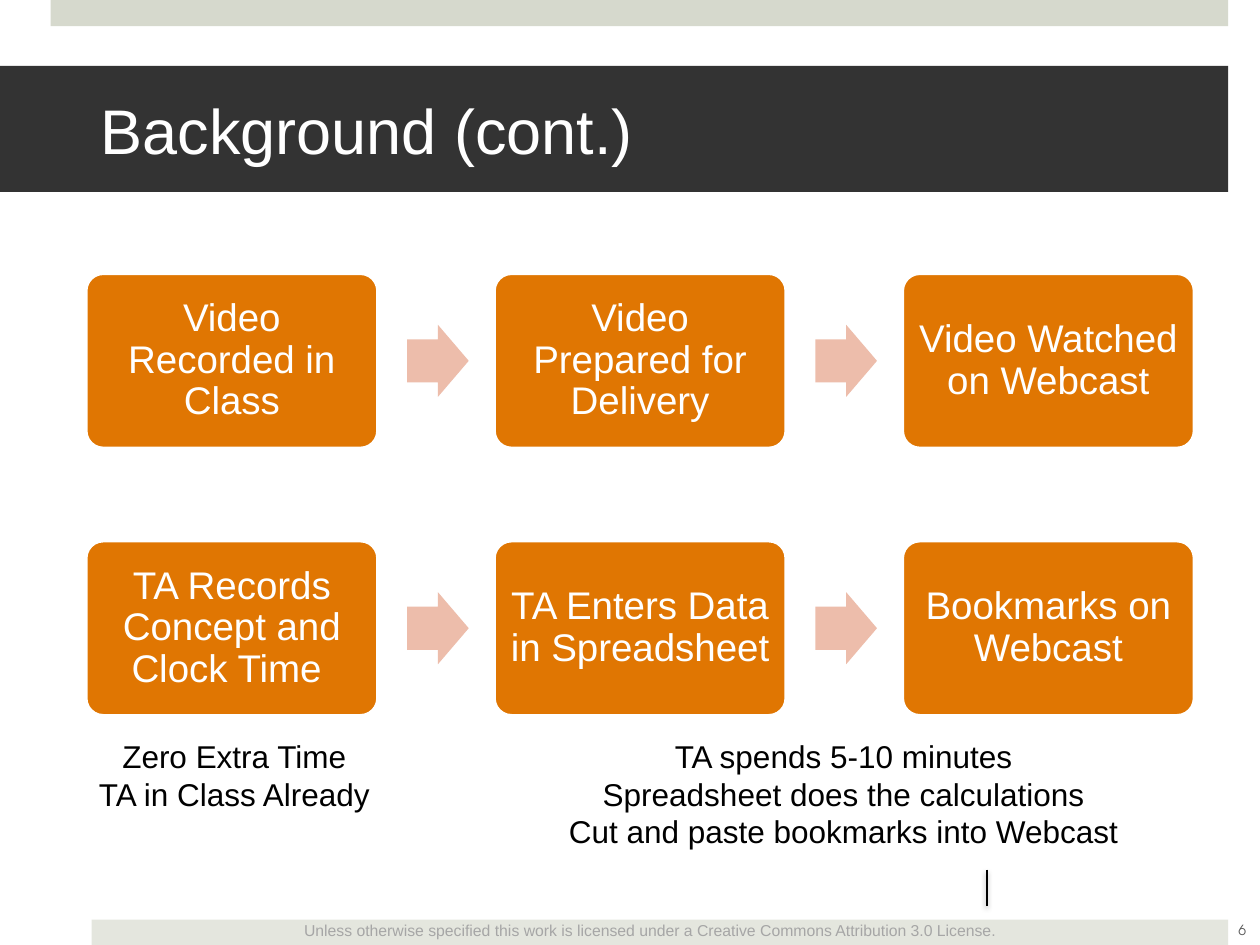
from dataclasses import dataclass

from pptx import Presentation
from pptx.dml.color import RGBColor
from pptx.enum import shapes, text
from pptx.oxml import parse_xml
from pptx.oxml.ns import nsdecls
from pptx.util import Cm, Pt

COLORS = {
    "sage": "D6D9CD", "pale_sage": "E4E6DE", "charcoal": "333333",
    "orange": "E07602", "peach": "EDBDAB", "white": "FFFFFF",
    "black": "000000", "license_gray": "A6A6A6", "number_gray": "595959",
}
STEP_LEFT, STEP_PITCH, STEP_WIDTH, STEP_HEIGHT = 1.73, 8.23, 5.89, 3.53
ARROW_OFFSET, ARROW_WIDTH, ARROW_HEIGHT = 6.48, 1.24, 1.45


@dataclass
class Flow:
    top: float
    steps: tuple[str, ...]


@dataclass
class Caption:
    """Centred text; position and size in centimetres."""
    left: float
    top: float
    width: float
    height: float
    lines: tuple[str, ...]
    size: int = 18
    color: str = "black"
    font: str = "Arial"
    wrap: bool = True
    anchor: text.MSO_ANCHOR = text.MSO_ANCHOR.TOP


FLOWS = (
    Flow(5.51, ("Video Recorded in Class", "Video Prepared for Delivery",
                "Video Watched on Webcast")),
    Flow(10.9, ("TA Records Concept and Clock Time ",
                "TA Enters Data in Spreadsheet ", "Bookmarks on Webcast")),
)
CAPTIONS = (
    Caption(1.9, 18.44, 22.4, 0.64,
            ("Unless otherwise specified this work is licensed under a "
             "Creative Commons Attribution 3.0 License.",), 9, "license_gray"),
    Caption(24.41, 18.24, 1.27, 1.02, ("6",), 8, "number_gray",
            "TeX Gyre Adventor", anchor=text.MSO_ANCHOR.MIDDLE),
    Caption(1.7, 14.73, 6.05, 1.8,
            ("Zero Extra Time", "TA in Class Already"), wrap=False),
    Caption(10.11, 14.73, 13.79, 2.57,
            ("TA spends 5-10 minutes", "Spreadsheet does the calculations",
             "Cut and paste bookmarks into Webcast")),
)


def color(name: str) -> RGBColor:
    return RGBColor.from_string(COLORS[name])


def style(para, size: int, tint: str, align, font: str = "Arial") -> None:
    para.alignment = align
    para.font.size = Pt(size)
    para.font.name = font
    para.font.color.rgb = color(tint)


def add_block(page, kind, left: float, top: float, width: float,
              height: float, fill: str):
    block = page.shapes.add_shape(kind, Cm(left), Cm(top), Cm(width), Cm(height))
    block.shadow.inherit = False
    block.fill.solid()
    block.fill.fore_color.rgb = color(fill)
    block.line.fill.background()
    return block


def add_step(page, left: float, top: float, label: str) -> None:
    box = add_block(page, shapes.MSO_SHAPE.ROUNDED_RECTANGLE, left, top,
                    STEP_WIDTH, STEP_HEIGHT, "orange")
    box.adjustments[0] = 0.1
    box.line.color.rgb = color("white")
    box.line.width = Pt(2)
    frame = box.text_frame
    frame.word_wrap = True
    frame.vertical_anchor = text.MSO_ANCHOR.MIDDLE
    frame.margin_left = frame.margin_right = Cm(0.22)
    frame.margin_top = frame.margin_bottom = Cm(0.22)
    para = frame.paragraphs[0]
    para.text = label
    para.line_spacing = 0.9
    style(para, 22, "white", text.PP_ALIGN.CENTER)


def add_flow(page, flow: Flow) -> None:
    for index, label in enumerate(flow.steps):
        left = STEP_LEFT + index * STEP_PITCH
        add_step(page, left, flow.top, label)
        if index < len(flow.steps) - 1:
            arrow = add_block(page, shapes.MSO_SHAPE.RIGHT_ARROW,
                              left + ARROW_OFFSET,
                              flow.top + (STEP_HEIGHT - ARROW_HEIGHT) / 2,
                              ARROW_WIDTH, ARROW_HEIGHT, "peach")
            arrow.adjustments[0] = 0.6
            arrow.adjustments[1] = 0.5


def add_caption(page, caption: Caption) -> None:
    box = page.shapes.add_textbox(Cm(caption.left), Cm(caption.top),
                                  Cm(caption.width), Cm(caption.height))
    frame = box.text_frame
    frame.word_wrap = caption.wrap
    frame.vertical_anchor = caption.anchor
    frame.text = "\n".join(caption.lines)
    for para in frame.paragraphs:
        style(para, caption.size, caption.color, text.PP_ALIGN.CENTER, caption.font)


def add_tick(page) -> None:
    """Short vertical line with a soft shadow above the footer."""
    tick = page.shapes.add_connector(shapes.MSO_CONNECTOR.STRAIGHT,
                                     Cm(19.89), Cm(17.53), Cm(19.89), Cm(18.26))
    tick.line.color.rgb = color("black")
    tick.line.width = Pt(1)
    effects = parse_xml(
        f'<a:effectLst {nsdecls("a")}><a:outerShdw blurRad="{Pt(3.1)}" '
        f'dist="{Pt(1.6)}" dir="5400000" rotWithShape="0">'
        f'<a:srgbClr val="{COLORS["black"]}"><a:alpha val="38000"/></a:srgbClr>'
        '</a:outerShdw></a:effectLst>')
    tick._element.spPr.append(effects)


def format_title(title) -> None:
    title.left, title.top = Cm(0), Cm(1.33)
    title.width, title.height = Cm(24.76), Cm(2.54)
    title.fill.solid()
    title.fill.fore_color.rgb = color("charcoal")
    frame = title.text_frame
    frame.text = "Background (cont.)"
    frame.auto_size = text.MSO_AUTO_SIZE.NONE
    frame.vertical_anchor = text.MSO_ANCHOR.MIDDLE
    frame.margin_left, frame.margin_right = Cm(2.03), Cm(0.76)
    style(frame.paragraphs[0], 36, "white", text.PP_ALIGN.LEFT)


def main() -> None:
    deck = Presentation()
    deck.slide_width, deck.slide_height = Cm(25.4), Cm(19.05)
    page = deck.slides.add_slide(deck.slide_layouts[5])
    format_title(page.shapes.title)
    rectangle = shapes.MSO_SHAPE.RECTANGLE
    add_block(page, rectangle, 1.02, 0, 23.74, 0.53, "sage")
    add_block(page, rectangle, 1.85, 18.54, 22.91, 0.51, "pale_sage")
    add_tick(page)
    for flow in FLOWS:
        add_flow(page, flow)
    for caption in CAPTIONS:
        add_caption(page, caption)
    deck.save("out.pptx")


if __name__ == "__main__":
    main()
